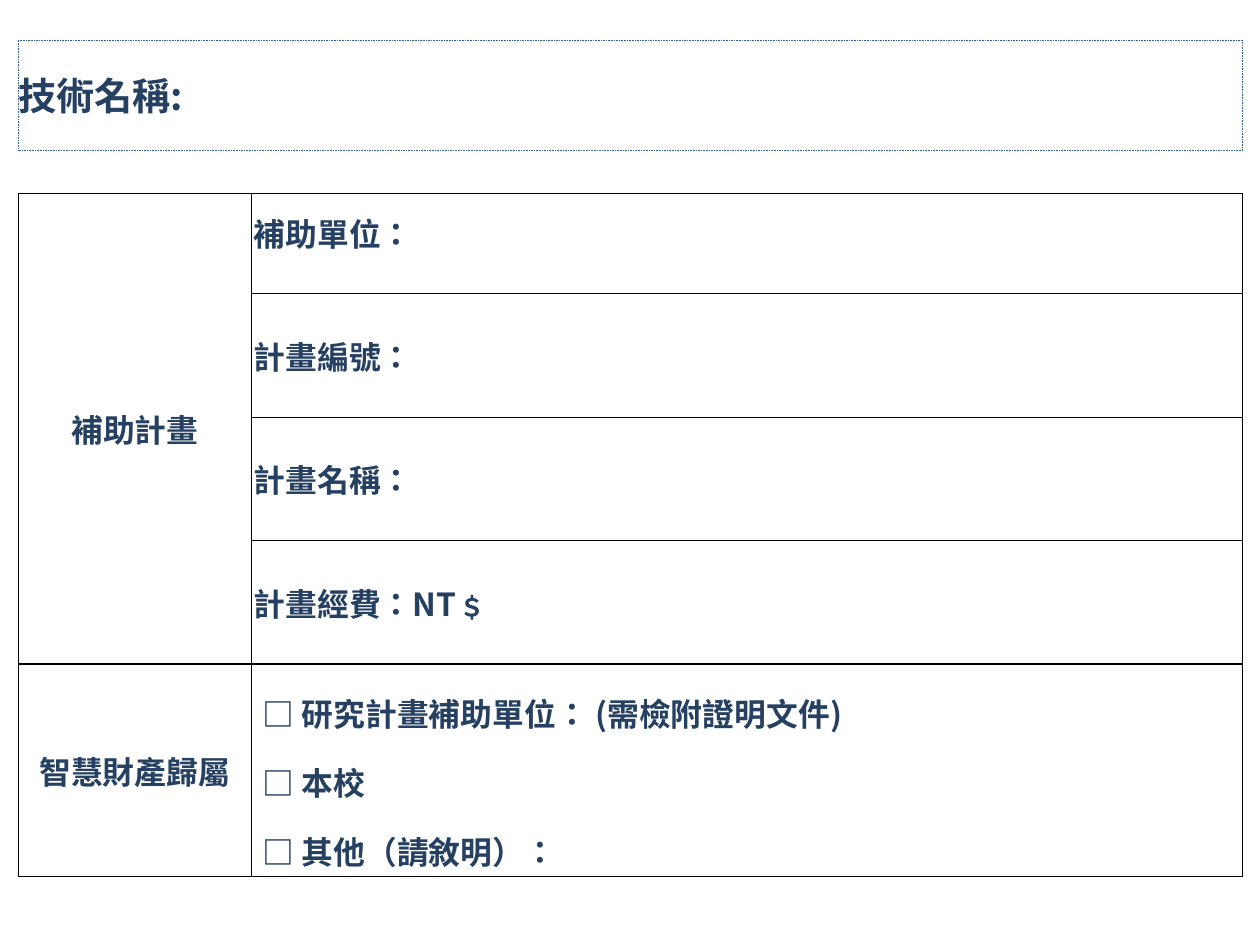
from dataclasses import dataclass
from typing import Optional, Union

import pptx
import pptx.dml.color
import pptx.enum.dml
import pptx.enum.lang
import pptx.enum.shapes
import pptx.enum.text
import pptx.oxml.ns
import pptx.slide
import pptx.table
import pptx.text.text
import pptx.util
from lxml import etree

Inches = pptx.util.Inches
Pt = pptx.util.Pt
Align = pptx.enum.text.PP_ALIGN
Anchor = pptx.enum.text.MSO_ANCHOR
qn = pptx.oxml.ns.qn


@dataclass(frozen=True)
class Theme:
    font: str = "Noto Sans CJK SC"
    ink: str = "254061"
    title_line: str = "376092"
    border: str = "000000"
    title_size: int = 24
    cell_size: int = 20
    border_width: int = 1


@dataclass(frozen=True)
class FormCell:
    row: int
    column: int
    text: str
    align: Align = Align.JUSTIFY
    line_spacing: Optional[Union[float, pptx.util.Length]] = None
    indent: float = 0


THEME = Theme()
CM_PER_INCH = 2.54
SLIDE_WIDTH, SLIDE_HEIGHT = 28 / CM_PER_INCH, 21 / CM_PER_INCH
LEFT, WIDTH = 0.16, 10.71
COLUMN_WIDTHS = [2.04, 8.67]
ROW_HEIGHTS = [0.88, 1.08, 1.08, 1.08, 1.86]
GRANT_ROWS = 4
OWNERSHIP_OPTIONS = ["□ 研究計畫補助單位： (需檢附證明文件)", "□ 本校", "□ 其他（請敘明）："]
FORM_CELLS = [
    FormCell(0, 0, "補助計畫", Align.CENTER),
    FormCell(0, 1, "補助單位：", line_spacing=Pt(15)),
    FormCell(1, 1, "計畫編號："),
    FormCell(2, 1, "計畫名稱："),
    FormCell(3, 1, "計畫經費：NT﹩"),
    FormCell(4, 0, "智慧財產歸屬", Align.CENTER),
    FormCell(4, 1, "\n".join(OWNERSHIP_OPTIONS), line_spacing=1.5, indent=0.08),
]


def format_runs(paragraph: pptx.text.text._Paragraph, size: int) -> None:
    for run in paragraph.runs:
        run.font.size = Pt(size)
        run.font.bold = True
        run.font.name = THEME.font
        run.font.language_id = pptx.enum.lang.MSO_LANGUAGE_ID.TRADITIONAL_CHINESE
        run.font.color.rgb = pptx.dml.color.RGBColor.from_string(THEME.ink)
        properties = run._r.get_or_add_rPr()
        etree.SubElement(properties, qn("a:ea"), typeface=THEME.font)


def add_title(slide: pptx.slide.Slide) -> None:
    shape = slide.shapes.add_shape(
        pptx.enum.shapes.MSO_SHAPE.RECTANGLE,
        Inches(LEFT), Inches(0.35), Inches(WIDTH), Inches(0.97),
    )
    shape.shadow.inherit = False
    shape.fill.background()
    shape.line.color.rgb = pptx.dml.color.RGBColor.from_string(THEME.title_line)
    shape.line.width = Pt(0.5)
    shape.line.dash_style = pptx.enum.dml.MSO_LINE.ROUND_DOT
    text_frame = shape.text_frame
    text_frame.margin_left = text_frame.margin_right = 0
    text_frame.margin_top = text_frame.margin_bottom = 0
    text_frame.vertical_anchor = Anchor.MIDDLE
    text_frame.word_wrap = True
    text_frame.text = "技術名稱:"
    paragraph = text_frame.paragraphs[0]
    paragraph.alignment = Align.LEFT
    format_runs(paragraph, THEME.title_size)


def style_cell(cell: pptx.table._Cell) -> None:
    cell.margin_left = cell.margin_right = Inches(0.02)
    cell.margin_top = cell.margin_bottom = 0
    cell.vertical_anchor = Anchor.MIDDLE
    properties = cell._tc.get_or_add_tcPr()
    for side in ("lnL", "lnR", "lnT", "lnB"):
        line = etree.SubElement(properties, qn(f"a:{side}"), w=str(Pt(THEME.border_width)))
        fill = etree.SubElement(line, qn("a:solidFill"))
        etree.SubElement(fill, qn("a:srgbClr"), val=THEME.border)
    cell.fill.background()


def fill_cell(table: pptx.table.Table, form_cell: FormCell) -> None:
    text_frame = table.cell(form_cell.row, form_cell.column).text_frame
    text_frame.text = form_cell.text
    for paragraph in text_frame.paragraphs:
        paragraph.alignment = form_cell.align
        if form_cell.line_spacing is not None:
            paragraph.line_spacing = form_cell.line_spacing
        if form_cell.indent:
            properties = paragraph._p.get_or_add_pPr()
            properties.set("marL", "0")
            properties.set("indent", str(Inches(form_cell.indent)))
        format_runs(paragraph, THEME.cell_size)


def add_form(slide: pptx.slide.Slide) -> None:
    table = slide.shapes.add_table(
        len(ROW_HEIGHTS), len(COLUMN_WIDTHS),
        Inches(LEFT), Inches(1.69), Inches(WIDTH), Inches(sum(ROW_HEIGHTS)),
    ).table
    table.first_row = False
    table.horz_banding = False
    for column, width in zip(table.columns, COLUMN_WIDTHS):
        column.width = Inches(width)
    for row, height in zip(table.rows, ROW_HEIGHTS):
        row.height = Inches(height)
    for cell in table.iter_cells():
        style_cell(cell)
    table.cell(0, 0).merge(table.cell(GRANT_ROWS - 1, 0))
    for form_cell in FORM_CELLS:
        fill_cell(table, form_cell)


def main() -> None:
    presentation = pptx.Presentation()
    presentation.slide_width = Inches(SLIDE_WIDTH)
    presentation.slide_height = Inches(SLIDE_HEIGHT)
    slide = presentation.slides.add_slide(presentation.slide_layouts[6])
    add_title(slide)
    add_form(slide)
    presentation.save("out.pptx")


if __name__ == "__main__":
    main()
